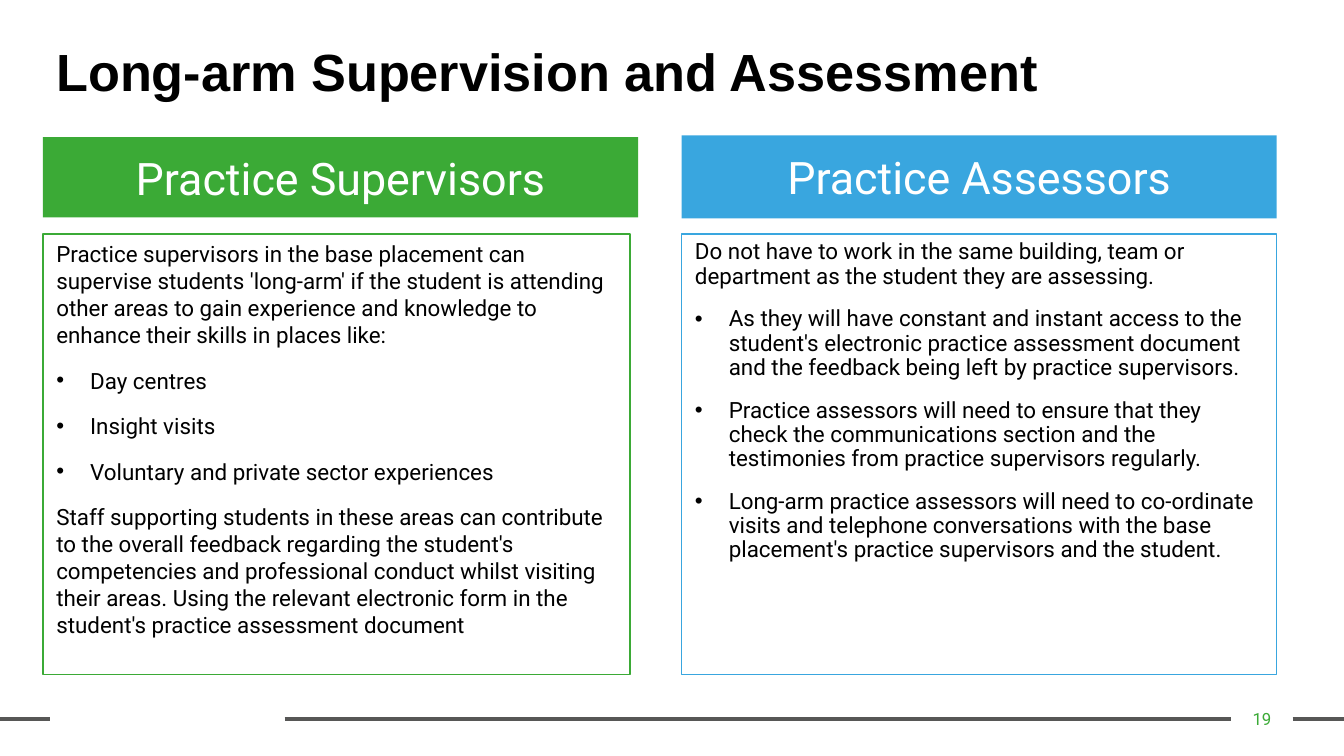
from dataclasses import dataclass
from typing import Optional

from lxml.etree import SubElement
from pptx import Presentation
from pptx.dml.color import RGBColor
from pptx.enum.shapes import MSO_CONNECTOR as Conn
from pptx.enum.text import MSO_ANCHOR as Anchor, MSO_AUTO_SIZE as AutoSize, PP_ALIGN as Align
from pptx.oxml.ns import qn
from pptx.util import Cm, Pt

COLORS = {
    "green": "3BAA36",
    "blue": "39A6DF",
    "grey": "575756",
    "black": "000000",
    "white": "FFFFFF",
}
INDENT = Cm(0.64)
RULE_Y = 13.59


@dataclass
class Box:
    left: float
    top: float
    width: float
    height: float


@dataclass
class Style:
    size: float
    color: str
    font: str = "Roboto"
    bold: bool = False
    align: Align = Align.LEFT
    line_spacing: float = 1.0


@dataclass
class Item:
    text: str
    bullet: bool = False


@dataclass
class Panel:
    heading: str
    color: str
    heading_box: Box
    body_box: Box
    line_spacing: float
    items: list[Item]


PANELS = [
    Panel("Practice Supervisors", "green", Box(0.81, 2.59, 11.25, 1.52), Box(0.81, 4.42, 11.1, 8.33), 1.0, [
        Item("Practice supervisors in the base placement can supervise students 'long-arm' if the student is "
             "attending other areas to gain experience and knowledge to enhance their skills in places like:"),
        Item("Day centres", True),
        Item("Insight visits", True),
        Item("Voluntary and private sector experiences", True),
        Item("Staff supporting students in these areas can contribute to the overall feedback regarding the "
             "student's competencies and professional conduct whilst visiting their areas. Using the relevant "
             "electronic form in the student's practice assessment document"),
    ]),
    Panel("Practice Assessors", "blue", Box(12.88, 2.56, 11.25, 1.57), Box(12.88, 4.42, 11.25, 8.33), 0.9, [
        Item("Do not have to work in the same building, team or department as the student they are assessing."),
        Item("As they will have constant and instant access to the student's electronic practice assessment "
             "document and the feedback being left by practice supervisors.", True),
        Item("Practice assessors will need to ensure that they check the communications section and the "
             "testimonies from practice supervisors regularly.", True),
        Item("Long-arm practice assessors will need to co-ordinate visits and telephone conversations with the "
             "base placement's practice supervisors and the student.", True),
    ]),
]


def rgb(name: str) -> RGBColor:
    return RGBColor.from_string(COLORS[name])


def place(sp, box: Box) -> None:
    sp.left, sp.top = Cm(box.left), Cm(box.top)
    sp.width, sp.height = Cm(box.width), Cm(box.height)


def set_bullet(p, bullet: bool) -> None:
    pPr = p._p.get_or_add_pPr()
    pPr.set("marL", str(INDENT if bullet else 0))
    pPr.set("indent", str(-INDENT if bullet else 0))
    if bullet:
        SubElement(pPr, qn("a:buFont"), typeface="Arial")
        SubElement(pPr, qn("a:buChar"), char="•")
    else:
        SubElement(pPr, qn("a:buNone"))


def write(sp, items: list[Item], style: Style, anchor: Anchor) -> None:
    tf = sp.text_frame
    tf.word_wrap = True
    tf.auto_size = AutoSize.NONE
    tf.vertical_anchor = anchor
    for i, item in enumerate(items):
        p = tf.add_paragraph() if i else tf.paragraphs[0]
        set_bullet(p, item.bullet)
        p.alignment = style.align
        p.line_spacing = style.line_spacing
        p.space_before = Pt(10 if i else 0)
        r = p.add_run()
        r.text = item.text
        r.font.name, r.font.size, r.font.bold = style.font, Pt(style.size), style.bold
        r.font.color.rgb = rgb(style.color)


def draw_panel(heading, body, panel: Panel) -> None:
    place(heading, panel.heading_box)
    heading.fill.solid()
    heading.fill.fore_color.rgb = rgb(panel.color)
    write(heading, [Item(panel.heading)], Style(24, "white", align=Align.CENTER), Anchor.MIDDLE)
    place(body, panel.body_box)
    body.line.color.rgb = rgb(panel.color)
    body.line.width = Pt(0.75)
    write(body, panel.items, Style(12, "black", line_spacing=panel.line_spacing), Anchor.TOP)


def draw_rule(slide, start: float, end: float, begin: Optional[tuple] = None, finish: Optional[tuple] = None) -> None:
    line = slide.shapes.add_connector(Conn.STRAIGHT, Cm(start), Cm(RULE_Y), Cm(end), Cm(RULE_Y))
    line.line.color.rgb = rgb("grey")
    line.line.width = Pt(2.25)
    SubElement(line._element.spPr, qn("a:effectLst"))
    if begin:
        line.begin_connect(*begin)
    if finish:
        line.end_connect(*finish)


def main() -> None:
    prs = Presentation()
    prs.slide_width, prs.slide_height = Cm(25.4), Cm(14.29)
    slide = prs.slides.add_slide(prs.slide_layouts[4])
    title, *holders = slide.placeholders

    place(title, Box(0.81, 0.74, 29.21, 3.68))
    write(title, [Item("Long-arm Supervision and Assessment")],
          Style(28, "black", "Arial", True, line_spacing=0.9), Anchor.TOP)
    for panel, heading, body in zip(PANELS, holders[::2], holders[1::2]):
        draw_panel(heading, body, panel)

    number = slide.shapes.add_textbox(Cm(23.27), Cm(RULE_Y - 0.38), Cm(1.16), Cm(0.76))
    tf = number.text_frame
    tf.margin_left = tf.margin_right = Cm(0.18)
    tf.margin_top = tf.margin_bottom = Cm(0.1)
    write(number, [Item("19")], Style(9, "green", align=Align.CENTER), Anchor.MIDDLE)

    draw_rule(slide, 0, 0.94)
    draw_rule(slide, 5.38, 23.27, finish=(number, 1))
    draw_rule(slide, 24.43, 25.4, begin=(number, 3))
    prs.save("out.pptx")


if __name__ == "__main__":
    main()
